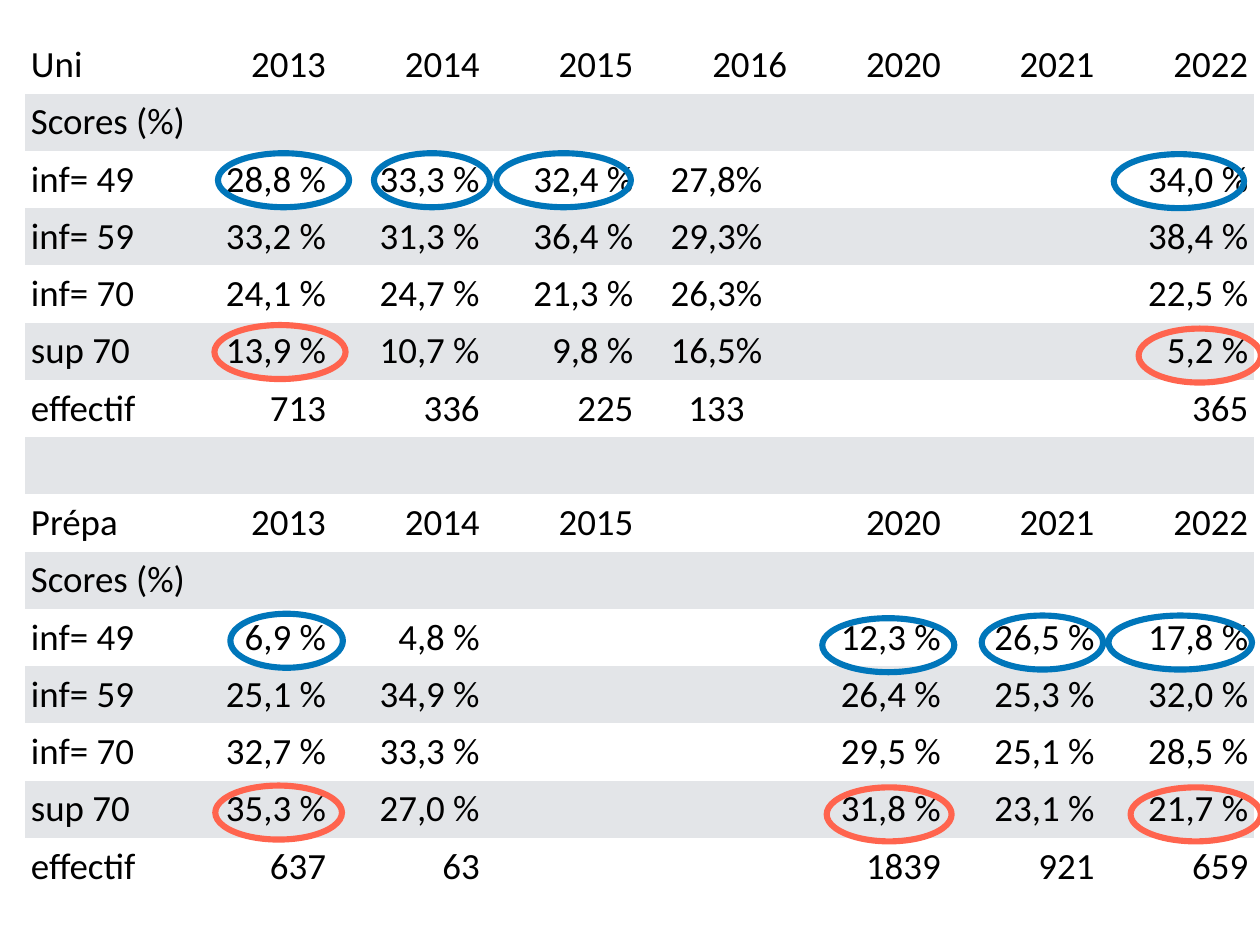
from pptx import Presentation
from pptx.dml.color import RGBColor
from pptx.enum.shapes import MSO_SHAPE
from pptx.enum.text import MSO_ANCHOR, PP_ALIGN
from pptx.oxml.ns import qn
from pptx.util import Inches, Pt

BLACK = RGBColor(0x00, 0x00, 0x00)
WHITE = RGBColor(0xFF, 0xFF, 0xFF)
GREY = RGBColor(0xE3, 0xE5, 0xE8)
BLUE = RGBColor(0x00, 0x76, 0xBA)
CORAL = RGBColor(0xFF, 0x64, 0x4E)

NO_STYLE_NO_GRID = "{2D5ABB26-0587-4C30-8999-92F81FD0307C}"
CENTRED_COLUMN = 4
SCORES_LABEL = "Scores (%)"

ROWS = [
    ["Uni", "2013", "2014", "2015", "2016", "2020", "2021", "2022"],
    [SCORES_LABEL],
    ["inf= 49", "28,8 %", "33,3 %", "32,4 %", "27,8%", "", "", "34,0 %"],
    ["inf= 59", "33,2 %", "31,3 %", "36,4 %", "29,3%", "", "", "38,4 %"],
    ["inf= 70", "24,1 %", "24,7 %", "21,3 %", "26,3%", "", "", "22,5 %"],
    ["sup 70", "13,9 %", "10,7 %", "9,8 %", "16,5%", "", "", "5,2 %"],
    ["effectif", "713", "336", "225", "133", "", "", "365"],
    [],
    ["Prépa", "2013", "2014", "2015", "", "2020", "2021", "2022"],
    [SCORES_LABEL],
    ["inf= 49", "6,9 %", "4,8 %", "", "", "12,3 %", "26,5 %", "17,8 %"],
    ["inf= 59", "25,1 %", "34,9 %", "", "", "26,4 %", "25,3 %", "32,0 %"],
    ["inf= 70", "32,7 %", "33,3 %", "", "", "29,5 %", "25,1 %", "28,5 %"],
    ["sup 70", "35,3 %", "27,0 %", "", "", "31,8 %", "23,1 %", "21,7 %"],
    ["effectif", "637", "63", "", "", "1839", "921", "659"],
]
COLUMN_COUNT = len(ROWS[0])

# Left, top and width of each ring, from back to front
RINGS = [
    (CORAL, 12.85, 3.71, 1.38),
    (CORAL, 12.76, 8.89, 1.47),
    (CORAL, 9.33, 8.89, 1.41),
    (BLUE, 12.57, 1.74, 1.47),
    (BLUE, 12.51, 6.95, 1.62),
    (BLUE, 11.08, 6.95, 1.37),
    (BLUE, 9.28, 6.98, 1.49),
    (BLUE, 2.6, 6.93, 1.27),
    (BLUE, 5.6, 1.73, 1.52),
    (BLUE, 4.22, 1.73, 1.31),
    (BLUE, 2.46, 1.73, 1.48),
    (CORAL, 2.42, 3.67, 1.48),
    (CORAL, 2.43, 8.87, 1.43),
]
RING_HEIGHT = Inches(0.61)

CELL_FORMAT = {
    "vertical_anchor": MSO_ANCHOR.MIDDLE,
    "margin_left": Inches(0.07),
    "margin_right": Inches(0.07),
    "margin_top": 0,
    "margin_bottom": 0,
}
FONT_FORMAT = {"name": "Calibri", "size": Pt(30)}

presentation = Presentation()
presentation.slide_width = Inches(14.22)
presentation.slide_height = Inches(10.67)
slide = presentation.slides.add_slide(presentation.slide_layouts[6])

# Score table
table_frame = slide.shapes.add_table(
    len(ROWS), COLUMN_COUNT,
    Inches(0.28), Inches(0.41), Inches(13.88), Inches(9.7),
)
table_frame.element.find(".//" + qn("a:tableStyleId")).text = NO_STYLE_NO_GRID
table = table_frame.table
table.first_row = False
table.horz_banding = False

for row_index, values in enumerate(ROWS):
    for column_index in range(COLUMN_COUNT):
        cell = table.cell(row_index, column_index)
        cell.fill.solid()
        cell.fill.fore_color.rgb = GREY if row_index % 2 else WHITE
        for attribute, value in CELL_FORMAT.items():
            setattr(cell, attribute, value)

    for column_index, text in enumerate(values):
        if not text:
            continue
        paragraph = table.cell(row_index, column_index).text_frame.paragraphs[0]
        if column_index == 0:
            paragraph.alignment = PP_ALIGN.LEFT
        elif column_index == CENTRED_COLUMN and row_index > 0:
            paragraph.alignment = PP_ALIGN.CENTER
        else:
            paragraph.alignment = PP_ALIGN.RIGHT
        run = paragraph.add_run()
        run.text = text
        run.font.color.rgb = BLACK
        for attribute, value in FONT_FORMAT.items():
            setattr(run.font, attribute, value)

    if values == [SCORES_LABEL]:
        table.cell(row_index, 0).merge(table.cell(row_index, 1))

# Rings around the lowest and highest score bands
for color, left, top, width in RINGS:
    ring = slide.shapes.add_shape(
        MSO_SHAPE.OVAL, Inches(left), Inches(top), Inches(width), RING_HEIGHT
    )
    ring.shadow.inherit = False
    ring.fill.background()
    ring.line.color.rgb = color
    ring.line.width = Pt(5)

presentation.save("out.pptx")
